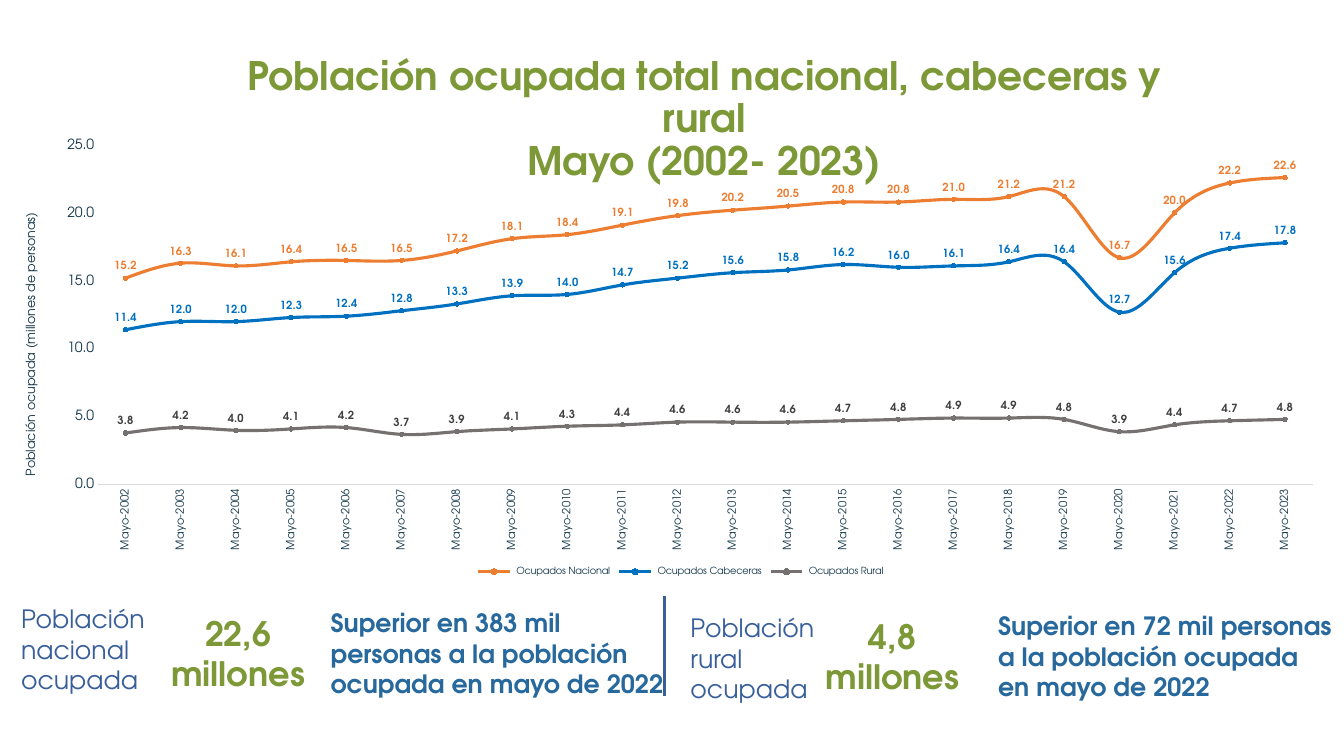
from lxml.etree import SubElement
from pptx import Presentation
from pptx.chart.data import CategoryChartData
from pptx.dml.color import RGBColor
from pptx.enum.chart import (XL_CHART_TYPE, XL_LABEL_POSITION, XL_LEGEND_POSITION,
                             XL_MARKER_STYLE, XL_TICK_MARK)
from pptx.enum.shapes import MSO_CONNECTOR
from pptx.enum.text import MSO_ANCHOR, MSO_AUTO_SIZE, PP_ALIGN
from pptx.oxml import parse_xml
from pptx.oxml.ns import nsdecls, qn
from pptx.util import Inches, Pt

WIDE, HIGH = Inches(13.33), Inches(7.5)
FACE = "TeX Gyre Adventor"

GREEN = RGBColor(0x7D, 0x98, 0x37)
BLUE = RGBColor(0x39, 0x5F, 0x9B)
DEEP = RGBColor(0x27, 0x68, 0x9D)
NAVY = RGBColor(0x12, 0x36, 0x4A)
PALE = RGBColor(0xD9, 0xD9, 0xD9)
ORANGE = RGBColor(0xED, 0x7D, 0x31)
AZURE = RGBColor(0x00, 0x70, 0xC0)
GREY = RGBColor(0x76, 0x71, 0x71)
DARK = RGBColor(0x40, 0x40, 0x40)

# Text formats
HEAD = dict(size=Pt(28), bold=True, color=GREEN)
NAME = dict(size=Pt(18), bold=False, color=BLUE)
COUNT = dict(size=Pt(24), bold=True, color=GREEN)
NOTE = dict(size=Pt(18), bold=True, color=DEEP)

YEARS = [f"Mayo-{year}" for year in range(2002, 2024)]
# Series: name, line colour, label colour, values
SERIES = [
    (" Ocupados Nacional ", ORANGE, ORANGE,
     [15.2, 16.3, 16.1, 16.4, 16.5, 16.5, 17.2, 18.1, 18.4, 19.1, 19.8,
      20.2, 20.5, 20.8, 20.8, 21.0, 21.2, 21.2, 16.7, 20.0, 22.2, 22.6]),
    (" Ocupados Cabeceras ", AZURE, AZURE,
     [11.4, 12.0, 12.0, 12.3, 12.4, 12.8, 13.3, 13.9, 14.0, 14.7, 15.2,
      15.6, 15.8, 16.2, 16.0, 16.1, 16.4, 16.4, 12.7, 15.6, 17.4, 17.8]),
    (" Ocupados Rural ", GREY, DARK,
     [3.8, 4.2, 4.0, 4.1, 4.2, 3.7, 3.9, 4.1, 4.3, 4.4, 4.6,
      4.6, 4.6, 4.7, 4.8, 4.9, 4.9, 4.8, 3.9, 4.4, 4.7, 4.8]),
]

# Facts: text, format, alignment, place in percent of the slide
FACTS = [
    (["Población nacional", "ocupada"], NAME, PP_ALIGN.LEFT, (0.83, 79.2, 12.08, 13.47)),
    (["22,6 millones"], COUNT, PP_ALIGN.CENTER, (11.33, 80.4, 12.75, 12.13)),
    (["Superior en 383 mil personas a la población ocupada en mayo de 2022"],
     NOTE, PP_ALIGN.LEFT, (23.86, 79.73, 26.33, 13.47)),
    (["Población rural", "ocupada"], NAME, PP_ALIGN.LEFT, (50.64, 80.4, 12.08, 13.47)),
    (["4,8 millones"], COUNT, PP_ALIGN.CENTER, (60.02, 80.8, 12.75, 12.13)),
    (["Superior en 72 mil personas a la población ocupada en mayo de 2022"],
     NOTE, PP_ALIGN.LEFT, (73.52, 80.13, 26.33, 13.47)),
]


def share(left, top, width, height):
    """Turn percentages of the slide into lengths."""
    return [round(part * full / 100) for part, full in
            zip((left, top, width, height), (WIDE, HIGH, WIDE, HIGH))]


def style(font, size, color, bold=False):
    for key, value in dict(name=FACE, size=size, bold=bold).items():
        setattr(font, key, value)
    font.color.rgb = color


def write(frame, lines, look, align, space=None):
    frame.word_wrap = True
    frame.vertical_anchor = MSO_ANCHOR.TOP
    frame.text = "\n".join(lines)
    for para in frame.paragraphs:
        para.alignment = align
        para.line_spacing = space
        style(para.runs[0].font, **look)


def add_title(slide):
    title = slide.shapes.title
    place = share(15.23, 6.8, 74.34, 15.87)
    for key, value in zip(("left", "top", "width", "height"), place):
        setattr(title, key, value)
    title.text_frame.auto_size = MSO_AUTO_SIZE.NONE
    lines = ["Población ocupada total nacional, cabeceras y rural", "Mayo (2002- 2023)"]
    write(title.text_frame, lines, HEAD, PP_ALIGN.CENTER, 0.9)


def add_fact(slide, lines, look, align, place):
    frame = slide.shapes.add_textbox(*share(*place)).text_frame
    write(frame, lines, look, align)
    frame.auto_size = MSO_AUTO_SIZE.SHAPE_TO_FIT_TEXT


def add_rule(slide):
    left, top, _, drop = share(49.44, 78.8, 0, 13.2)
    rule = slide.shapes.add_connector(MSO_CONNECTOR.STRAIGHT, left, top, left, top + drop)
    rule.line.color.rgb = BLUE
    rule.line.width = Pt(2.25)
    SubElement(rule._element.spPr, qn("a:effectLst"))


def style_axes(chart):
    years, people = chart.category_axis, chart.value_axis
    for axis, size in ((years, Pt(8)), (people, Pt(10))):
        axis.major_tick_mark = axis.minor_tick_mark = XL_TICK_MARK.NONE
        axis.has_major_gridlines = False
        style(axis.tick_labels.font, size, NAVY)
    years.format.line.color.rgb = PALE
    years.format.line.width = Pt(0.75)
    turn = years._element.find(qn("c:txPr")).find(qn("a:bodyPr"))
    turn.set("rot", "-5400000")
    turn.set("vert", "horz")

    scale = dict(minimum_scale=0, maximum_scale=25, major_unit=5)
    for key, value in scale.items():
        setattr(people, key, value)
    people.format.line.fill.background()
    people.tick_labels.number_format = "0.0"
    people.tick_labels.number_format_is_linked = False
    frame = people.axis_title.text_frame
    frame.text = "Población ocupada (millones de personas)"
    style(frame.paragraphs[0].runs[0].font, Pt(9), NAVY)


def style_line(line, color, ink):
    line.smooth = True
    line.format.line.color.rgb = color
    line.format.line.width = Pt(2.25)
    mark = line.marker
    mark.style, mark.size = XL_MARKER_STYLE.CIRCLE, 3
    mark.format.fill.solid()
    mark.format.fill.fore_color.rgb = color
    mark.format.line.color.rgb = color
    labels = line.data_labels
    look = dict(show_value=True, position=XL_LABEL_POSITION.ABOVE,
                number_format="0.0", number_format_is_linked=False)
    for key, value in look.items():
        setattr(labels, key, value)
    style(labels.font, Pt(8), ink, True)


def fix_plot(chart, x, y, w, h):
    """Place the inner plot area by shares of the chart."""
    area = chart._chartSpace.chart.plotArea
    for old in area.findall(qn("c:layout")):
        area.remove(old)
    area.insert(0, parse_xml(
        f'<c:layout {nsdecls("c")}><c:manualLayout><c:layoutTarget val="inner"/>'
        '<c:xMode val="edge"/><c:yMode val="edge"/>'
        f'<c:x val="{x}"/><c:y val="{y}"/><c:w val="{w}"/><c:h val="{h}"/>'
        '</c:manualLayout></c:layout>'))


def add_lines(slide):
    data = CategoryChartData(number_format="0.0")
    data.categories = YEARS
    for name, _, _, values in SERIES:
        data.add_series(name, values)
    place = share(1.58, 18.13, 98.35, 58.67)
    chart = slide.shapes.add_chart(XL_CHART_TYPE.LINE_MARKERS, *place, data).chart
    chart.has_title = False
    style(chart.font, Pt(8), NAVY)
    style_axes(chart)
    plot = chart.plots[0]
    plot.vary_by_categories = False
    for line, (_, color, ink, _) in zip(plot.series, SERIES):
        style_line(line, color, ink)
    fix_plot(chart, 0.058, 0.018, 0.919, 0.766)
    chart.has_legend = True
    chart.legend.position = XL_LEGEND_POSITION.BOTTOM
    chart.legend.include_in_layout = False
    style(chart.legend.font, Pt(7), NAVY)


def main():
    deck = Presentation()
    deck.slide_width, deck.slide_height = WIDE, HIGH
    slide = deck.slides.add_slide(deck.slide_layouts[5])
    add_title(slide)
    for fact in FACTS:
        add_fact(slide, *fact)
    add_lines(slide)
    add_rule(slide)
    deck.save("out.pptx")


if __name__ == "__main__":
    main()
